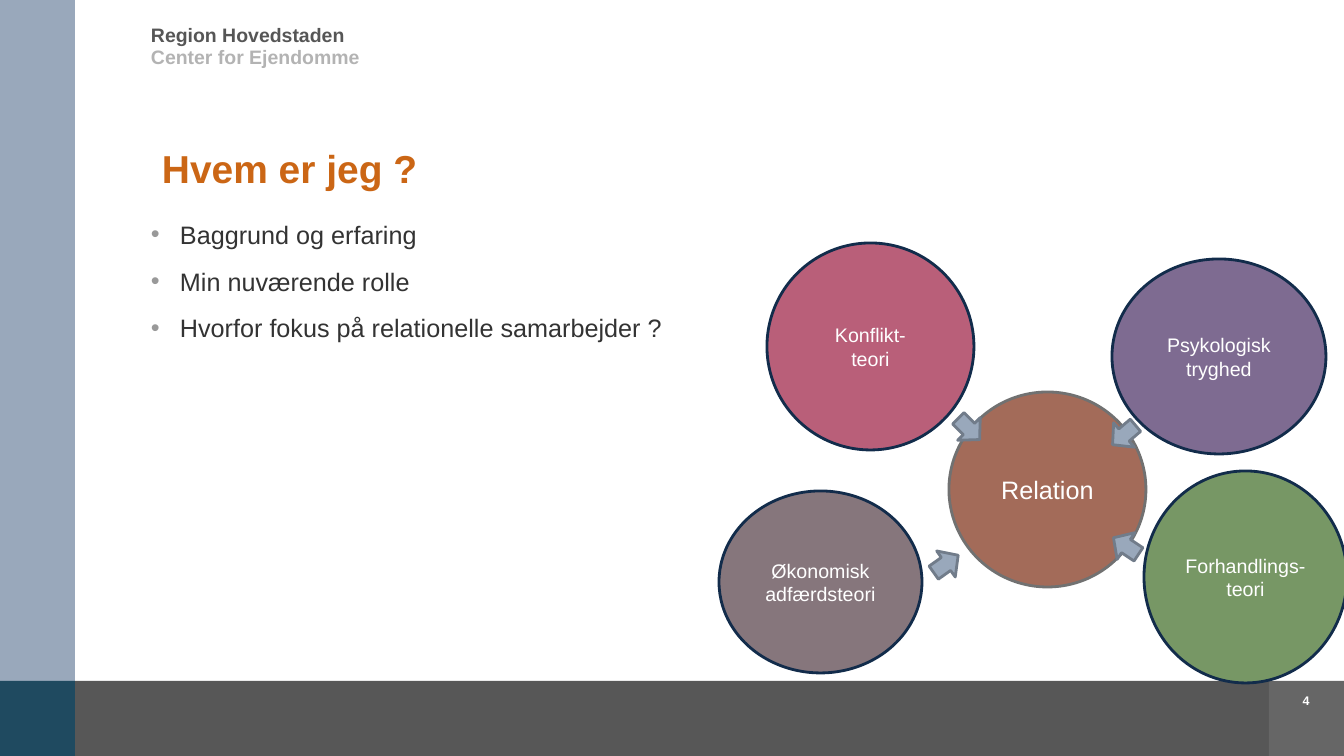
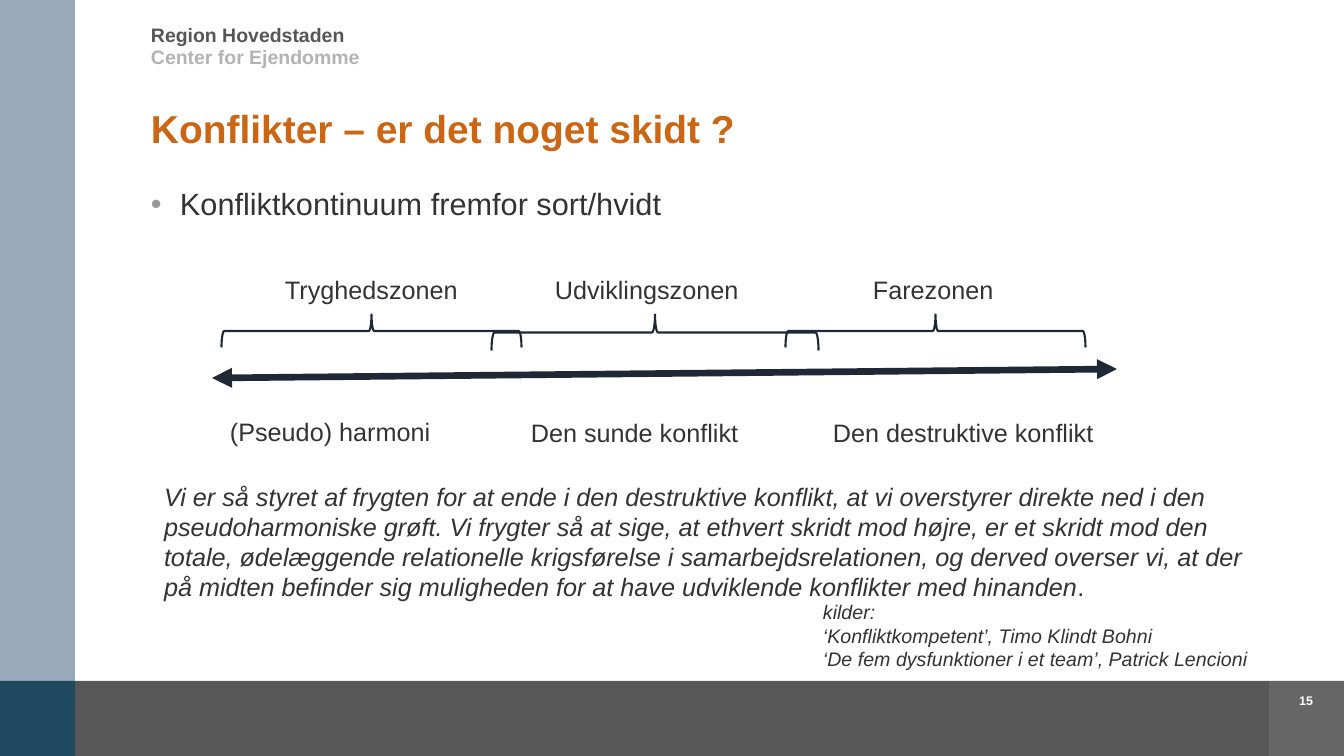
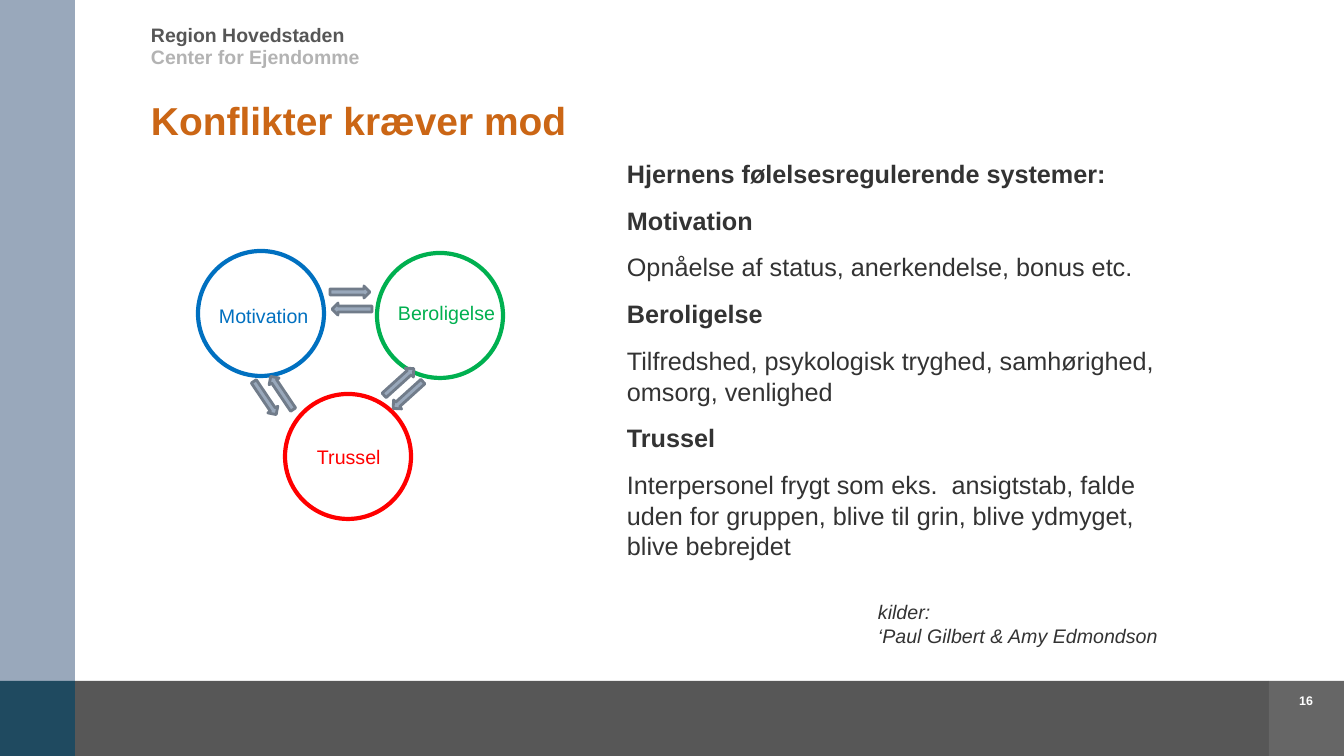
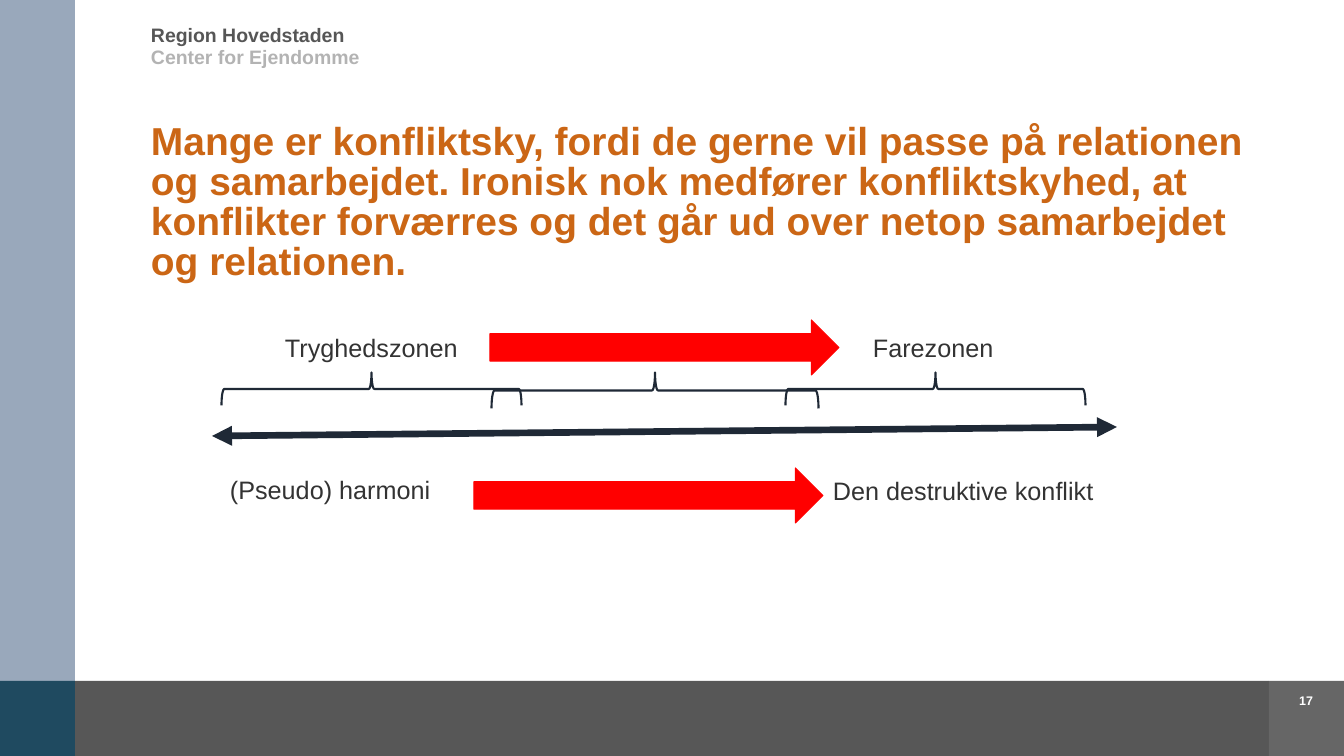
"""Four slides on conflicts and relational collaboration."""
from lxml import etree
from pptx import Presentation
from pptx import util as u
from pptx.dml.color import RGBColor
from pptx.enum import shapes, text
from pptx.oxml import ns

SCALE = 914400 / 100.8
FONT = "Arial"
WHITE = RGBColor(0xFF, 0xFF, 0xFF)
INK = RGBColor(0x33, 0x33, 0x33)
ORANGE = RGBColor(0xCB, 0x66, 0x15)
DARK_GREY = RGBColor(0x56, 0x56, 0x56)
LIGHT_GREY = RGBColor(0xB3, 0xB3, 0xB3)
BAND_GREY = RGBColor(0x57, 0x57, 0x57)
NUMBER_GREY = RGBColor(0x66, 0x66, 0x66)
STEEL = RGBColor(0x99, 0xA8, 0xBB)
STEEL_EDGE = RGBColor(0x71, 0x7C, 0x8A)
PETROL = RGBColor(0x1F, 0x4A, 0x60)
NAVY = RGBColor(0x12, 0x2C, 0x4B)
SLATE = RGBColor(0x1F, 0x29, 0x36)
CLAY = RGBColor(0xA3, 0x6B, 0x59)
CLAY_EDGE = RGBColor(0x71, 0x71, 0x71)
ROSE = RGBColor(0xB9, 0x5F, 0x79)
PURPLE = RGBColor(0x7E, 0x6B, 0x91)
MOSS = RGBColor(0x77, 0x97, 0x65)
TAUPE = RGBColor(0x86, 0x76, 0x7C)
BLUE = RGBColor(0x00, 0x70, 0xC0)
GREEN = RGBColor(0x00, 0xB0, 0x50)
RED = RGBColor(0xFF, 0x00, 0x00)
KIND = shapes.MSO_SHAPE


def add_figure(slide, kind, box, fill=None, edge=None, width=2, turn=0):
    figure = slide.shapes.add_shape(kind, *[u.Emu(round(n * SCALE)) for n in box])
    figure.shadow.inherit = False
    figure.rotation = turn
    if fill is None:
        figure.fill.background()
    else:
        figure.fill.solid()
        figure.fill.fore_color.rgb = fill
    if edge is None:
        figure.line.fill.background()
    else:
        figure.line.color.rgb = edge
        figure.line.width = u.Pt(width)
    return figure


def add_text(place, paragraphs, size, color, box=None, after=0, bullet=False, centred=False):
    if box:
        place = place.shapes.add_textbox(*[u.Emu(round(n * SCALE)) for n in box])
    frame = place.text_frame
    frame.word_wrap = True
    if box:
        frame.margin_left = frame.margin_top = frame.margin_right = frame.margin_bottom = 0
    for index, runs in enumerate(paragraphs):
        paragraph = frame.add_paragraph() if index else frame.paragraphs[0]
        if bullet:
            settings = paragraph._p.get_or_add_pPr()
            settings.set("marL", str(round(29 * SCALE)))
            settings.set("indent", str(round(-29 * SCALE)))
            tint = etree.SubElement(settings, ns.qn("a:buClr"))
            etree.SubElement(tint, ns.qn("a:srgbClr"), val="999999")
            etree.SubElement(settings, ns.qn("a:buFont"), typeface=FONT)
            etree.SubElement(settings, ns.qn("a:buChar"), char="•")
        paragraph.alignment = text.PP_ALIGN.CENTER if centred else text.PP_ALIGN.LEFT
        paragraph.space_after = u.Pt(after)
        for words, style in runs:
            run = paragraph.add_run()
            run.text = words
            run.font.name = FONT
            run.font.size = u.Pt(size)
            run.font.color.rgb = color
            run.font.bold = style == "b"
            run.font.italic = style == "i"
    return frame


deck = Presentation()
deck.slide_width = u.Emu(round(1344 * SCALE))
deck.slide_height = u.Emu(round(756 * SCALE))

bands = [
    ((68, 681, 1201, 75), BAND_GREY),
    ((1269, 681, 75, 75), NUMBER_GREY),
    ((0, 0, 75, 681), STEEL),
    ((0, 681, 75, 75), PETROL),
]
pages = [
    ("4", "Hvem er jeg ?", 162, 191),
    ("15", "Konflikter – er det noget skidt ?", 151, 151),
    ("16", "Konflikter kræver mod", 151, 143),
    ("17", "Mange er konfliktsky, fordi de gerne vil passe på relationen og samarbejdet. "
     "Ironisk nok medfører konfliktskyhed, at konflikter forværres og det går ud over "
     "netop samarbejdet og relationen.", 151, 283),
]
for number, title, left, bottom in pages:
    slide = deck.slides.add_slide(deck.slide_layouts[6])
    for box, color in bands:
        add_figure(slide, KIND.RECTANGLE, box, color)
    add_text(slide, [[("Region Hovedstaden", "b")]], 13.9, DARK_GREY, (151, 23, 674, 24))
    add_text(slide, [[("Center for Ejendomme", "b")]], 13.9, LIGHT_GREY, (151, 45, 674, 46))
    heading = add_text(slide, [[(title, "b")]], 27.8, ORANGE, (left, bottom - 92, 1118, 92))
    heading.vertical_anchor = text.MSO_ANCHOR.BOTTOM
    heading.paragraphs[0].line_spacing = 0.85
    add_text(slide, [[(number, "b")]], 8.9, WHITE, (1268, 693, 76, 20), centred=True)
who, continuum, courage, avoidance = deck.slides

topics = ["Baggrund og erfaring", "Min nuværende rolle",
          "Hvorfor fokus på relationelle samarbejder ?"]
add_text(who, [[(topic, "")] for topic in topics], 18, INK, (151, 219, 609, 195),
         after=11.9, bullet=True)
theories = [
    ((949, 392, 197, 195), CLAY, CLAY_EDGE, 18, ["Relation"]),
    ((767, 243, 207, 207), ROSE, NAVY, 14, ["Konflikt-", "teori"]),
    ((1112, 259, 214, 195), PURPLE, NAVY, 14, ["Psykologisk tryghed"]),
    ((1144, 471, 203, 212), MOSS, NAVY, 14, ["Forhandlings-teori"]),
    ((719, 491, 203, 182), TAUPE, NAVY, 14, ["Økonomisk adfærdsteori"]),
]
for box, fill, edge, size, lines in theories:
    circle = add_figure(who, KIND.FLOWCHART_CONNECTOR, box, fill, edge)
    add_text(circle, [[(line, "")] for line in lines], size, WHITE, centred=True)
for x, y, turn in [(954, 413, 44.9), (931, 548, 324.5), (1111, 530, 213.6), (1109, 419, 139.6)]:
    add_figure(who, KIND.RIGHT_ARROW, (x, y, 30, 32), STEEL, STEEL_EDGE, turn=turn)

add_text(continuum, [[("Konfliktkontinuum fremfor sort/hvidt", "")]], 21.9, INK,
         (151, 185, 1118, 40), bullet=True)
outer_labels = [
    ("(Pseudo) harmoni", 230, 416), ("Den destruktive konflikt", 833, 417),
    ("Tryghedszonen", 285, 274), ("Farezonen", 873, 274),
]
middle_labels = [("Den sunde konflikt", 531, 417), ("Udviklingszonen", 555, 274)]
braces = [(355, 181, 33, 300), (637, 169, 36, 327), (919, 181, 33, 300)]
for slide, drop, labels in [(continuum, 0, outer_labels + middle_labels),
                            (avoidance, 58, outer_labels)]:
    ends = (212, 378 + drop, 1117, 369 + drop)
    axis = slide.shapes.add_connector(shapes.MSO_CONNECTOR.STRAIGHT,
                                      *[u.Emu(round(n * SCALE)) for n in ends])
    axis.line.color.rgb = SLATE
    axis.line.width = u.Pt(4.75)
    for tip in ("a:headEnd", "a:tailEnd"):
        etree.SubElement(axis.line._get_or_add_ln(), ns.qn(tip), type="triangle")
    etree.SubElement(axis._element.spPr, ns.qn("a:effectLst"))
    for x, y, w, h in braces:
        add_figure(slide, KIND.LEFT_BRACE, (x, y + drop, w, h), edge=SLATE, width=1.5, turn=90)
    for label, x, y in labels:
        add_text(slide, [[(label, "")]], 18, INK, (x, y + drop, 300, 30))

quote = ("Vi er så styret af frygten for at ende i den destruktive konflikt, at vi overstyrer "
         "direkte ned i den pseudoharmoniske grøft. Vi frygter så at sige, at ethvert skridt mod "
         "højre, er et skridt mod den totale, ødelæggende relationelle krigsførelse i "
         "samarbejdsrelationen, og derved overser vi, at der på midten befinder sig muligheden "
         "for at have udviklende konflikter med hinanden")
add_text(continuum, [[(quote, "i"), (".", "")]], 18, INK, (164, 481, 1096, 119))
sources = [
    (continuum, 823, ["kilder:", "‘Konfliktkompetent’, Timo Klindt Bohni",
                      "‘De fem dysfunktioner i et team’, Patrick Lencioni"]),
    (courage, 878, ["kilder:", "‘Paul Gilbert & Amy Edmondson"]),
]
for slide, x, lines in sources:
    add_text(slide, [[(line, "i")] for line in lines], 14, INK, (x, 600, 460, 47))

systems = [
    ("Hjernens følelsesregulerende systemer:", "b"),
    ("Motivation", "b"),
    ("Opnåelse af status, anerkendelse, bonus etc.", ""),
    ("Beroligelse", "b"),
    ("Tilfredshed, psykologisk tryghed, samhørighed, omsorg, venlighed", ""),
    ("Trussel", "b"),
    ("Interpersonel frygt som eks.  ansigtstab, falde uden for gruppen, blive til grin, "
     "blive ydmyget, blive bebrejdet", ""),
]
add_text(courage, [[system] for system in systems], 18, INK, (627, 158, 542, 404), after=11.9)
emotions = [
    ("Motivation", BLUE, 198, 251, 219, 304),
    ("Beroligelse", GREEN, 377, 253, 398, 301),
    ("Trussel", RED, 285, 394, 317, 445),
]
for emotion, color, x, y, label_x, label_y in emotions:
    add_figure(courage, KIND.OVAL, (x, y, 126, 125), edge=color, width=3)
    add_text(courage, [[(emotion, "")]], 14, color, (label_x, label_y, 110, 24))
exchanges = [(330, 286, 0), (332, 303, 180), (379, 376, 317.9),
             (388, 389, 137.9), (245, 392, 56), (262, 387, 236)]
for x, y, turn in exchanges:
    add_figure(courage, KIND.RIGHT_ARROW, (x, y, 40, 12), STEEL, STEEL_EDGE, turn=turn)

for x, y in [(474, 468), (490, 320)]:
    add_figure(avoidance, KIND.RIGHT_ARROW, (x, y, 349, 55), RED, RED, 0.75)

deck.save("out.pptx")
